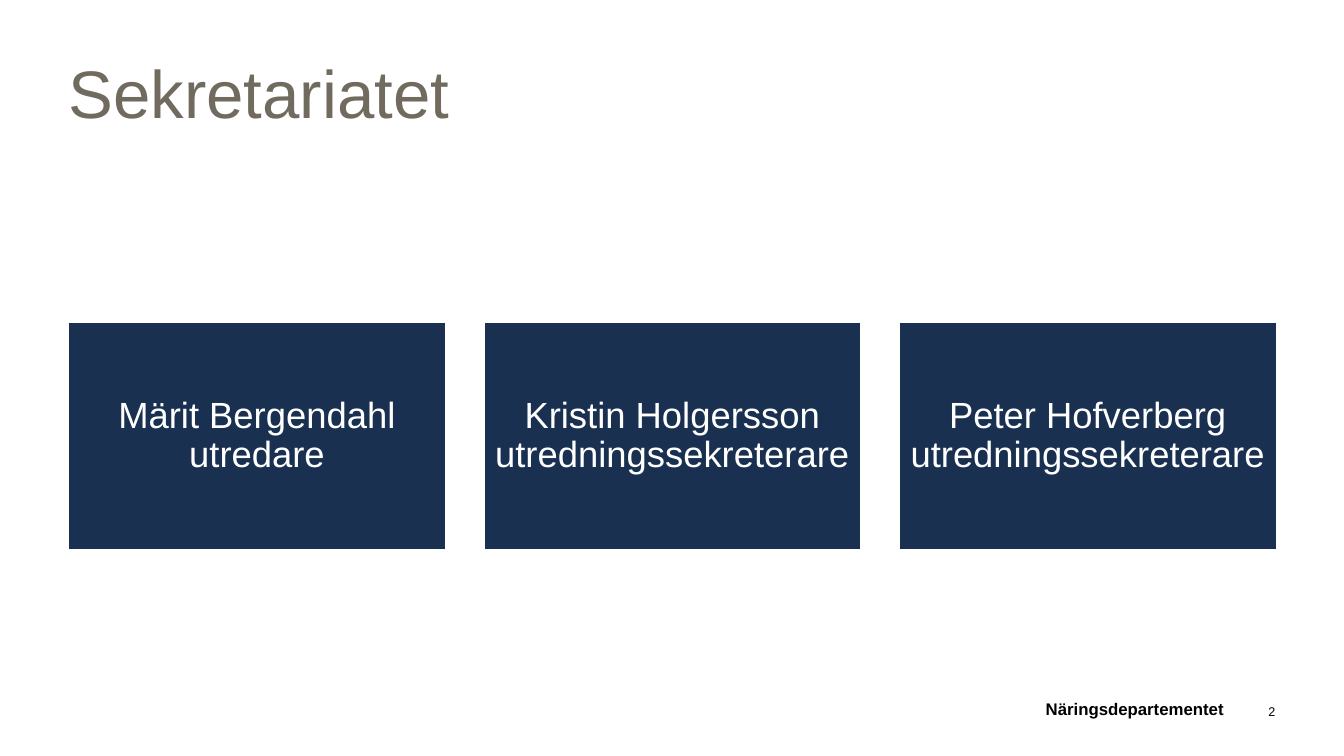
from dataclasses import dataclass

from pptx import Presentation
from pptx.dml.color import RGBColor as Rgb
from pptx.enum import shapes, text
from pptx.util import Inches, Pt


@dataclass(frozen=True)
class Theme:
    """Colours, font and type sizes of the slide."""
    font: str = "Arial"
    brown: str = "716B5F"
    navy: str = "1A3050"
    white: str = "FFFFFF"
    black: str = "000000"
    head: int = 48
    card: int = 26
    foot: int = 12
    page: int = 9


THEME = Theme()
ALIGN = text.PP_ALIGN
ANCHOR = text.MSO_ANCHOR
STAFF = [
    "Märit Bergendahl utredare",
    "Kristin Holgersson utredningssekreterare",
    "Peter Hofverberg utredningssekreterare",
]


def write(shape, words, size, color, align, anchor, pad=(0, 0), bold=False):
    """Fill a shape with one styled paragraph, padded by (side, top)."""
    frame = shape.text_frame
    frame.word_wrap = True
    frame.vertical_anchor = anchor
    frame.margin_left = frame.margin_right = Inches(pad[0])
    frame.margin_top = frame.margin_bottom = Inches(pad[1])
    frame.text = words
    para = frame.paragraphs[0]
    para.alignment = align
    font = para.runs[0].font
    font.name, font.size, font.bold = THEME.font, Pt(size), bold
    font.color.rgb = Rgb.from_string(color)
    return para


def label(slide, box, *args, **style):
    """Add a text box with one paragraph."""
    shape = slide.shapes.add_textbox(*map(Inches, box))
    write(shape, *args, **style)


def title(slide, box, words):
    """Add the slide heading."""
    label(slide, box, words, THEME.head, THEME.brown, ALIGN.LEFT, ANCHOR.TOP,
          pad=(0, 0.12))


def cards(slide, box, names, gap):
    """Spread one card per person evenly across the box."""
    left, top, width, height = box
    wide = (width - gap * (len(names) - 1)) / len(names)
    for i, name in enumerate(names):
        place = left + i * (wide + gap), top, wide, height
        card = slide.shapes.add_shape(shapes.MSO_SHAPE.RECTANGLE,
                                      *map(Inches, place))
        card.shadow.inherit = False
        card.fill.solid()
        card.fill.fore_color.rgb = Rgb.from_string(THEME.navy)
        card.line.color.rgb = Rgb.from_string(THEME.white)
        card.line.width = Pt(1)
        para = write(card, name, THEME.card, THEME.white, ALIGN.CENTER,
                     ANCHOR.MIDDLE, pad=(0.1, 0.11))
        para.line_spacing = 0.9


def footer(slide, box, owner, page):
    """Add the owner and the page number at the right of the box."""
    left, top, width, height = box
    label(slide, (left, top, width - 0.51, height), owner, THEME.foot,
          THEME.black, ALIGN.RIGHT, ANCHOR.BOTTOM, bold=True)
    label(slide, (left + width - 0.53, top, 0.53, height), page, THEME.page,
          THEME.black, ALIGN.RIGHT, ANCHOR.BOTTOM)


def main():
    """Build and save the slide."""
    deck = Presentation()
    deck.slide_width, deck.slide_height = Inches(13.33), Inches(7.5)
    slide = deck.slides.add_slide(deck.slide_layouts[6])
    title(slide, (0.68, 0.39, 11.97, 1.13), "Sekretariatet")
    cards(slide, (0.68, 3.2, 11.98, 2.25), STAFF, 0.38)
    footer(slide, (8.36, 6.89, 4.29, 0.24), "Näringsdepartementet", "2")
    deck.save("out.pptx")


if __name__ == "__main__":
    main()
